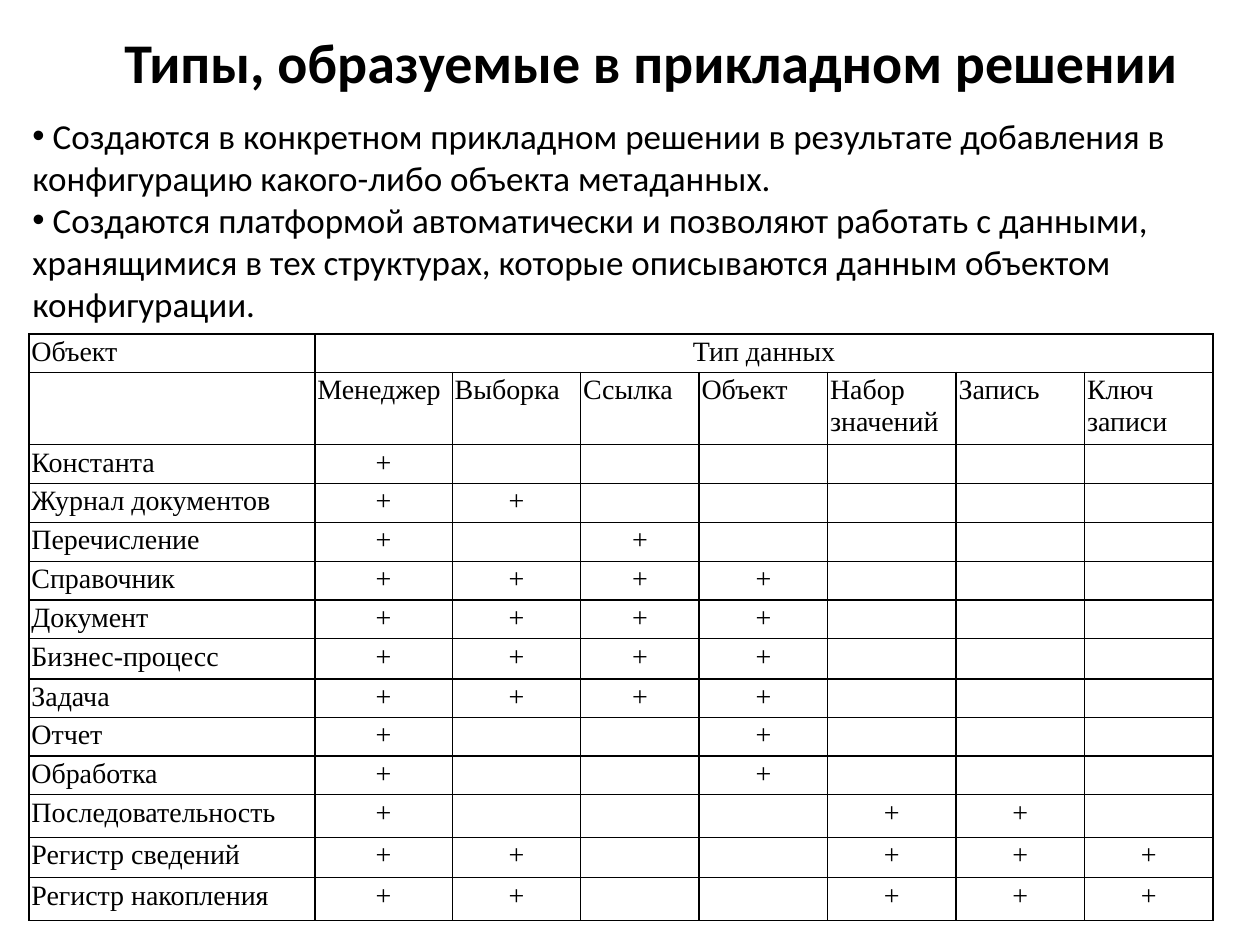
import pptx
import pptx.dml.color
import pptx.enum.text
import pptx.oxml.ns
import pptx.util
from lxml import etree

Inches, Pt = pptx.util.Inches, pptx.util.Pt
ALIGN = pptx.enum.text.PP_ALIGN
qn = pptx.oxml.ns.qn
BLACK = pptx.dml.color.RGBColor(0, 0, 0)

TITLE = "Типы, образуемые в прикладном решении"
POINTS = [
    " Создаются в конкретном прикладном решении в результате добавления в "
    "конфигурацию какого-либо объекта метаданных.",
    " Создаются платформой автоматически и позволяют работать с данными, "
    "хранящимися в тех структурах, которые описываются данным объектом конфигурации.",
]
DATA_TYPES = ["Менеджер", "Выборка", "Ссылка", "Объект",
              "Набор значений", "Запись", "Ключ записи"]
# Each object with the numbers of the data types it has
OBJECTS = [
    ("Константа", [1]),
    ("Журнал документов", [1, 2]),
    ("Перечисление", [1, 3]),
    ("Справочник", [1, 2, 3, 4]),
    ("Документ", [1, 2, 3, 4]),
    ("Бизнес-процесс", [1, 2, 3, 4]),
    ("Задача", [1, 2, 3, 4]),
    ("Отчет", [1, 4]),
    ("Обработка", [1, 4]),
    ("Последовательность", [1, 5, 6]),
    ("Регистр сведений", [1, 2, 5, 6, 7]),
    ("Регистр накопления", [1, 2, 5, 6, 7]),
]
COLUMN_WIDTHS = [2.27, 1.09, 1.02, 0.94] + [1.02] * 4
ROW_HEIGHTS = [0.3, 0.57, 0.3, 0.31, 0.31, 0.3, 0.3, 0.32,
               0.3, 0.3, 0.3, 0.34, 0.32, 0.34]
CELL_MARGIN = 0.02
CELL_SIZE = 16


def style_runs(paragraph, font_name, size, bold=False):
    for run in paragraph.runs:
        run.font.name = font_name
        run.font.size = Pt(size)
        run.font.bold = bold
        run.font.color.rgb = BLACK


def add_text(slide, box, texts, size, bold=False):
    frame = slide.shapes.add_textbox(*map(Inches, box)).text_frame
    frame.word_wrap = True
    frame.text = "\n".join(texts)
    for paragraph in frame.paragraphs:
        style_runs(paragraph, "Calibri", size, bold)
    return frame


def add_bullet(paragraph):
    properties = paragraph._p.get_or_add_pPr()
    properties.set("marL", "0")
    properties.set("indent", "0")
    etree.SubElement(properties, qn("a:buFont"), typeface="Arial")
    etree.SubElement(properties, qn("a:buChar"), char="•")


def add_borders(cell):
    properties = cell._tc.get_or_add_tcPr()
    for position, side in enumerate(("lnL", "lnR", "lnT", "lnB")):
        line = etree.Element(qn("a:" + side), w=str(Pt(1)))
        fill = etree.SubElement(line, qn("a:solidFill"))
        etree.SubElement(fill, qn("a:srgbClr"), val=str(BLACK))
        properties.insert(position, line)


def fill_cell(cell, text, alignment):
    cell.fill.background()
    add_borders(cell)
    cell.margin_left = cell.margin_right = Inches(CELL_MARGIN)
    cell.margin_top = cell.margin_bottom = Inches(CELL_MARGIN)
    cell.text_frame.text = text
    paragraph = cell.text_frame.paragraphs[0]
    paragraph.alignment = alignment
    style_runs(paragraph, "Times New Roman", CELL_SIZE)
    if not text:
        # An empty cell takes its line height from the end-of-paragraph size
        etree.SubElement(paragraph._p, qn("a:endParaRPr"), sz=str(CELL_SIZE * 100))


def add_type_table(slide):
    columns = range(1, len(DATA_TYPES) + 1)
    rows = [["Объект", "Тип данных"] + [""] * (len(DATA_TYPES) - 1),
            [""] + DATA_TYPES]
    rows += [[name] + ["+" if column in marked else "" for column in columns]
             for name, marked in OBJECTS]
    table = slide.shapes.add_table(
        len(rows), len(COLUMN_WIDTHS), Inches(0.23), Inches(2.65),
        Inches(sum(COLUMN_WIDTHS)), Inches(sum(ROW_HEIGHTS))).table
    table.first_row = table.horz_banding = False
    for column, width in zip(table.columns, COLUMN_WIDTHS):
        column.width = Inches(width)
    for row, height in zip(table.rows, ROW_HEIGHTS):
        row.height = Inches(height)
    for r, row in enumerate(rows):
        for c, text in enumerate(row):
            centred = text in ("+", "Тип данных")
            fill_cell(table.cell(r, c), text,
                      ALIGN.CENTER if centred else ALIGN.JUSTIFY)
    table.cell(0, 1).merge(table.cell(0, len(DATA_TYPES)))


def main():
    presentation = pptx.Presentation()
    presentation.slide_width, presentation.slide_height = Inches(10), Inches(7.5)
    slide = presentation.slides.add_slide(presentation.slide_layouts[6])
    title = add_text(slide, (0.73, 0.17, 8.88, 0.64), [TITLE], 32, bold=True)
    title.paragraphs[0].alignment = ALIGN.CENTER
    points = add_text(slide, (0.16, 0.86, 9.53, 1.78), POINTS, 20)
    for paragraph in points.paragraphs:
        add_bullet(paragraph)
    add_type_table(slide)
    presentation.save("out.pptx")


if __name__ == "__main__":
    main()
